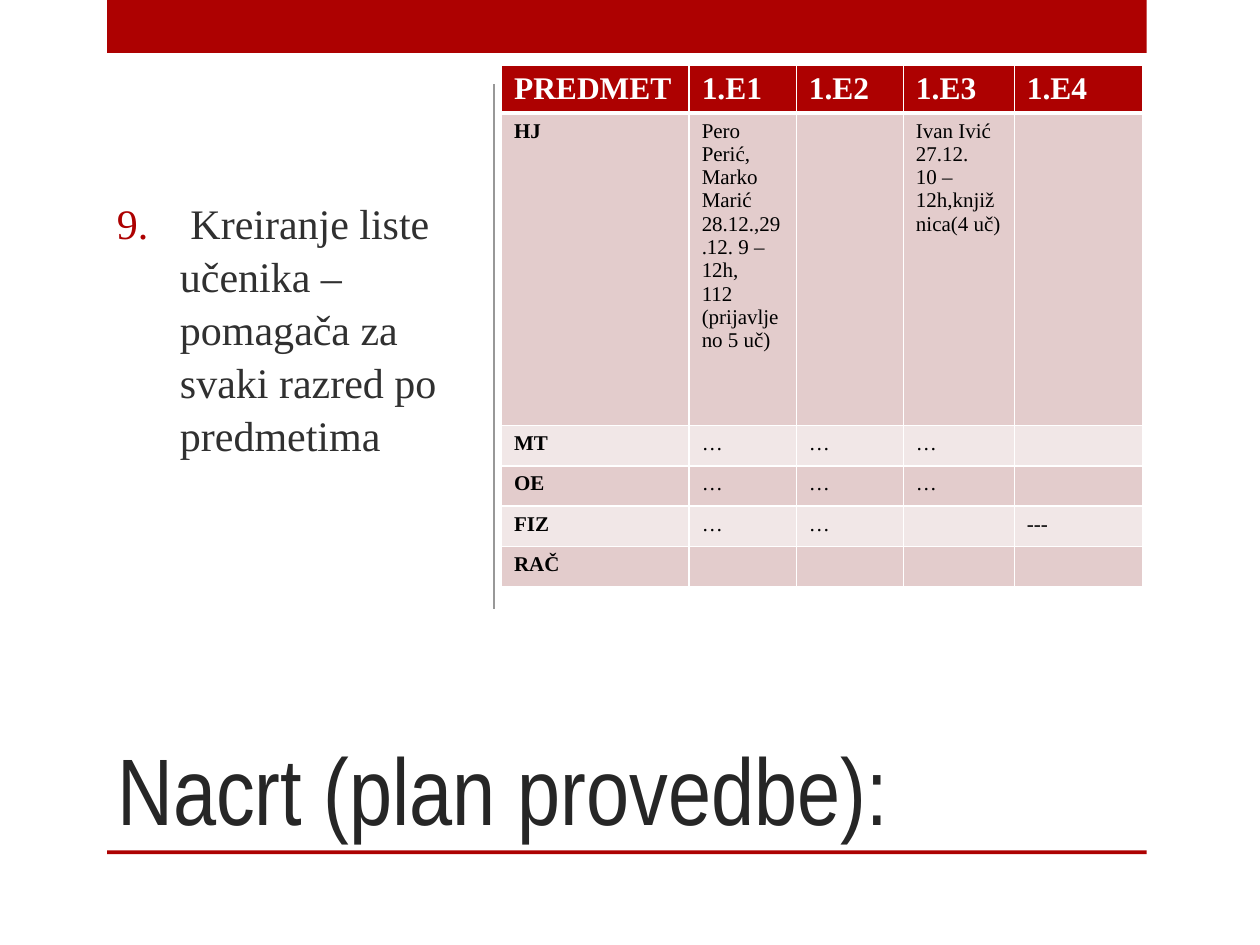
"""Build the slide listing student helpers for each class by subject."""
from dataclasses import dataclass

import lxml.etree
import pptx
import pptx.dml.color
import pptx.enum.shapes
import pptx.enum.text
import pptx.oxml.ns
import pptx.util

WIDTH, HEIGHT = 10, 7.5
RED, WHITE, BLACK = "AD0101", "FFFFFF", "000000"
BANDS = ("E3CCCC", "F1E7E7")
SERIF = "Times New Roman"
COLUMNS = (1.49, 0.85, 0.85, 0.88, 1.02)
ROWS = (0.32, 2.48, 0.32, 0.32, 0.32, 0.32)
CELLS = (
    ("PREDMET", "1.E1", "1.E2", "1.E3", "1.E4"),
    (
        "HJ",
        "Pero Perić,\nMarko Marić 28.12.,29.12. 9 – 12h,\n112 (prijavljeno 5 uč)",
        "",
        "Ivan Ivić\n27.12.\n10 – 12h,knjižnica(4 uč)",
        "",
    ),
    ("MT", "…", "…", "…", ""),
    ("OE", "…", "…", "…", ""),
    ("FIZ", "…", "…", "", "---"),
    ("RAČ", "", "", "", ""),
)


@dataclass(frozen=True)
class Box:
    left: float
    top: float
    width: float
    height: float

    def lengths(self) -> tuple:
        return tuple(map(pptx.util.Inches, (self.left, self.top, self.width, self.height)))


@dataclass(frozen=True)
class TextStyle:
    font: str
    size: float
    color: str
    bold: bool = False


BARS = (Box(0.85, 0, 8.25, 0.42), Box(0.85, 0.9 * HEIGHT, 8.25, 0.03))
TITLE = Box(0.83, 5, 7.42, 1.75)
BODY = Box(0.83, 0.5, 2.92, 4.2)
TABLE = Box(3.98, 0.52, sum(COLUMNS), sum(ROWS))
DIVIDER = Box(3.92, 0.67, 0, 4.16)


def rgb(color: str) -> pptx.dml.color.RGBColor:
    return pptx.dml.color.RGBColor.from_string(color)


def add_element(parent, tag: str, **attributes: str):
    element = lxml.etree.SubElement(parent, pptx.oxml.ns.qn(tag))
    for name, value in attributes.items():
        element.set(name, value)
    return element


def format_text(text_frame, style: TextStyle) -> None:
    for paragraph in text_frame.paragraphs:
        for run in paragraph.runs:
            run.font.name = style.font
            run.font.size = pptx.util.Pt(style.size)
            run.font.bold = style.bold
            run.font.color.rgb = rgb(style.color)


def add_bar(slide, box: Box) -> None:
    shape = slide.shapes.add_shape(pptx.enum.shapes.MSO_SHAPE.RECTANGLE, *box.lengths())
    shape.shadow.inherit = False
    shape.fill.solid()
    shape.fill.fore_color.rgb = rgb(RED)
    shape.line.fill.background()


def add_divider(slide, box: Box) -> None:
    left, top, width, height = box.lengths()
    line = slide.shapes.add_connector(
        pptx.enum.shapes.MSO_CONNECTOR.STRAIGHT, left, top, left + width, top + height
    )
    line.line.color.rgb = rgb("989898")
    line.line.width = pptx.util.Pt(1.25)
    add_element(line._element.spPr, "a:effectLst")


def set_title(slide, box: Box) -> None:
    title = slide.shapes.title
    title.left, title.top, title.width, title.height = box.lengths()
    title.text_frame.text = "Nacrt (plan provedbe):"
    title.text_frame.vertical_anchor = pptx.enum.text.MSO_ANCHOR.BOTTOM
    title.text_frame.auto_size = pptx.enum.text.MSO_AUTO_SIZE.NONE
    title.text_frame.paragraphs[0].alignment = pptx.enum.text.PP_ALIGN.LEFT
    format_text(title.text_frame, TextStyle("Arial Narrow", 54, "262626"))


def add_numbered_text(slide, box: Box) -> None:
    text_frame = slide.shapes.add_textbox(*box.lengths()).text_frame
    text_frame.word_wrap = True
    text_frame.vertical_anchor = pptx.enum.text.MSO_ANCHOR.MIDDLE
    text_frame.text = " Kreiranje liste učenika – pomagača za svaki razred po predmetima"
    format_text(text_frame, TextStyle(SERIF, 24, "303030"))
    paragraph = text_frame.paragraphs[0]
    paragraph.line_spacing = 1.05
    properties = paragraph._p.get_or_add_pPr()
    indent = pptx.util.Inches(0.5)
    properties.set("marL", str(indent))
    properties.set("indent", str(-indent))
    add_element(add_element(properties, "a:buClr"), "a:srgbClr", val=RED)
    add_element(properties, "a:buFont", typeface=SERIF)
    add_element(properties, "a:buAutoNum", type="arabicPeriod", startAt="9")


def add_borders(cell, bottom: float, top: float) -> None:
    properties = cell._tc.get_or_add_tcPr()
    for side, width in (("L", 1), ("R", 1), ("T", top), ("B", bottom)):
        line = add_element(properties, f"a:ln{side}", w=str(pptx.util.Pt(width)))
        add_element(add_element(line, "a:solidFill"), "a:srgbClr", val=WHITE)


def fill_cell(cell, text: str, row: int, column: int) -> None:
    header = row == 0
    add_borders(cell, bottom=3 if header else 1, top=3 if row == 1 else 1)
    cell.fill.solid()
    cell.fill.fore_color.rgb = rgb(RED if header else BANDS[(row - 1) % 2])
    style = TextStyle(
        SERIF, 18 if header else 12, WHITE if header else BLACK, header or column == 0
    )
    cell.text_frame.text = text
    format_text(cell.text_frame, style)
    for paragraph in cell.text_frame.paragraphs:
        paragraph._p.get_or_add_endParaRPr().set("sz", str(style.size * 100))


def add_subject_table(slide, box: Box) -> None:
    table = slide.shapes.add_table(len(ROWS), len(COLUMNS), *box.lengths()).table
    for column, width in zip(table.columns, COLUMNS):
        column.width = pptx.util.Inches(width)
    for row, height in zip(table.rows, ROWS):
        row.height = pptx.util.Inches(height)
    for row, texts in enumerate(CELLS):
        for column, text in enumerate(texts):
            fill_cell(table.cell(row, column), text, row, column)


def main() -> None:
    presentation = pptx.Presentation()
    presentation.slide_width = pptx.util.Inches(WIDTH)
    presentation.slide_height = pptx.util.Inches(HEIGHT)
    slide = presentation.slides.add_slide(presentation.slide_layouts[5])
    for bar in BARS:
        add_bar(slide, bar)
    add_divider(slide, DIVIDER)
    set_title(slide, TITLE)
    add_subject_table(slide, TABLE)
    add_numbered_text(slide, BODY)
    presentation.save("out.pptx")


if __name__ == "__main__":
    main()
